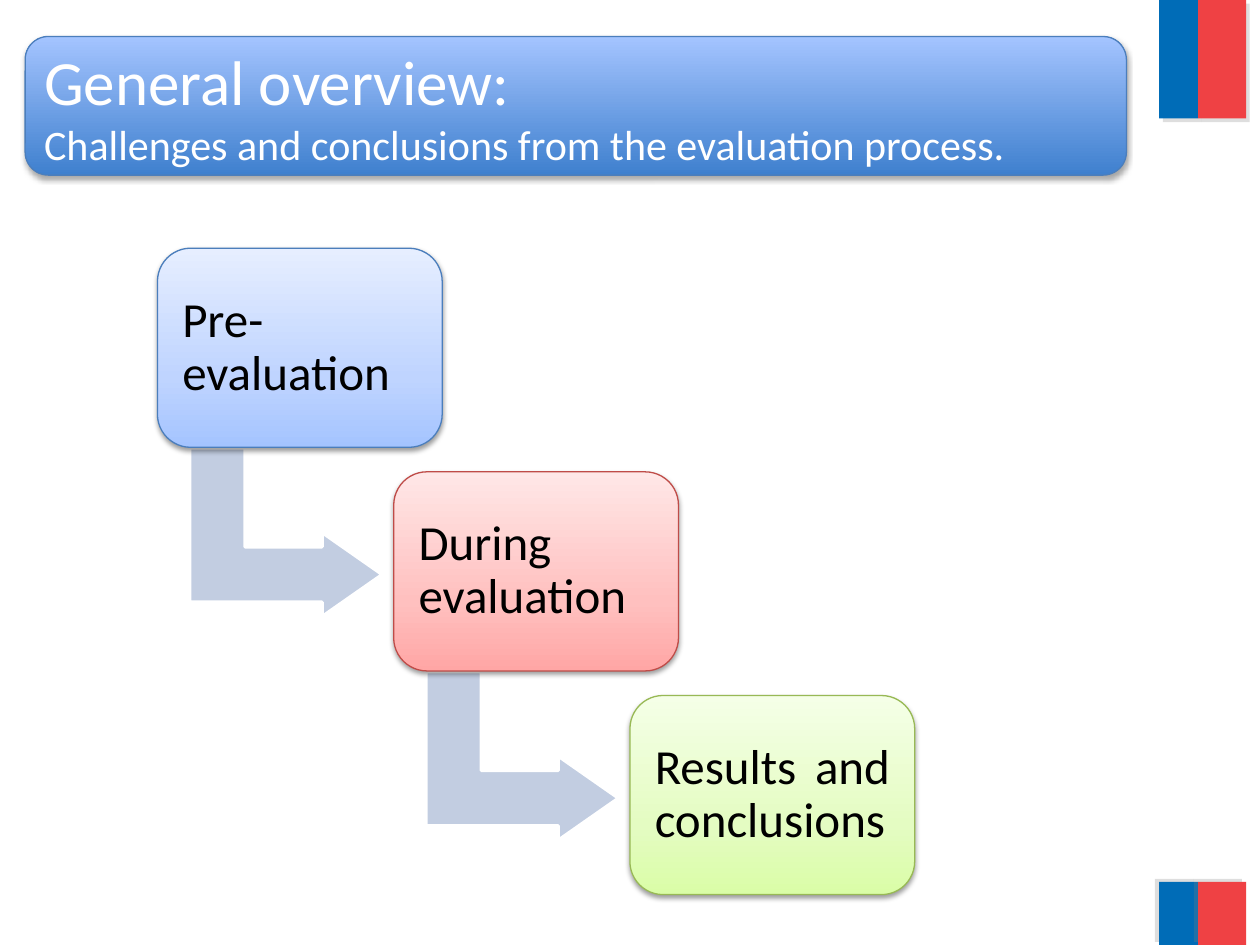
from dataclasses import dataclass

from pptx import Presentation
from pptx.dml.color import RGBColor
from pptx.enum.shapes import MSO_SHAPE
from pptx.enum.text import MSO_ANCHOR, MSO_AUTO_SIZE, PP_ALIGN
from pptx.oxml import parse_xml
from pptx.oxml.ns import nsdecls, qn
from pptx.util import Inches, Pt


@dataclass(frozen=True)
class Theme:
    """Colours and type sizes of the slide."""
    font: str = "Calibri"
    title_size: int = 36
    subtitle_size: int = 24
    step_size: int = 28
    white: str = "FFFFFF"
    black: str = "000000"
    grey: str = "808080"
    arrow: str = "C2CDE1"
    flag_blue: str = "006CB7"
    flag_red: str = "EF4144"
    blue_line: str = "4B7EBC"
    banner: tuple = ((0, "3F80CE"), (100, "A4C4FF"))
    blue: tuple = ((0, "A4C4FF"), (35, "BFD4FF"), (100, "E6EEFF"))
    red_line: str = "BF4C48"
    red: tuple = ((0, "FFA6A5"), (35, "FFC0BF"), (100, "FFE7E7"))
    green_line: str = "98B955"
    green: tuple = ((0, "DAFDA7"), (35, "E4FCC2"), (100, "F5FFE7"))


THEME = Theme()
STEPS = (
    ("Pre-evaluation", THEME.blue, THEME.blue_line),
    ("During evaluation", THEME.red, THEME.red_line),
    ("Results and conclusions", THEME.green, THEME.green_line),
)
STEP_LEFT, STEP_TOP = 1.25, 1.97
STEP_WIDTH, STEP_HEIGHT = 2.26, 1.58
COLUMN_PITCH, ROW_PITCH = 1.875, 1.775
BANNER = (0.2, 0.29, 8.74, 1.1)


def add_shape(slide, kind, box):
    """Add a preset shape, without shadow, at a box in inches."""
    shape = slide.shapes.add_shape(kind, *map(Inches, box))
    shape.shadow.inherit = False
    return shape


def set_fill(shape, colour):
    """Fill a shape with one colour."""
    shape.fill.solid()
    shape.fill.fore_color.rgb = RGBColor.from_string(colour)


def set_line(shape, colour, width):
    """Outline a shape in a colour and a width in points."""
    shape.line.color.rgb = RGBColor.from_string(colour)
    shape.line.width = Pt(width)


def set_gradient(shape, stops):
    """Fill a shape with a gradient that runs from bottom to top."""
    shape.fill.gradient()
    shape.fill.gradient_angle = 90
    stop_list = shape.element.spPr.find(qn("a:gradFill")).find(qn("a:gsLst"))
    for stop in list(stop_list):
        stop_list.remove(stop)
    for percent, colour in stops:
        stop_list.append(parse_xml(
            f'<a:gs {nsdecls("a")} pos="{percent * 1000}">'
            f'<a:srgbClr val="{colour}"/></a:gs>'))


def add_shadow(shape, colour, opacity, blur, distance, angle):
    """Give a shape an outer shadow."""
    effects = shape.element.spPr.find(qn("a:effectLst"))
    effects.append(parse_xml(
        f'<a:outerShdw {nsdecls("a")} blurRad="{Pt(blur)}" dist="{Pt(distance)}" '
        f'dir="{angle * 60000}" rotWithShape="0"><a:srgbClr val="{colour}">'
        f'<a:alpha val="{opacity * 1000}"/></a:srgbClr></a:outerShdw>'))


def format_paragraph(paragraph, size, colour):
    """Justify a paragraph and set its font."""
    paragraph.alignment = PP_ALIGN.JUSTIFY
    paragraph.font.name = THEME.font
    paragraph.font.size = Pt(size)
    paragraph.font.color.rgb = RGBColor.from_string(colour)


def add_flag(slide, top, height, shadow_angle):
    """Add a blue and red flag at the right edge."""
    for left, width, colour in ((9.2, 0.31, THEME.flag_blue),
                                (9.51, 0.38, THEME.flag_red)):
        band = add_shape(slide, MSO_SHAPE.RECTANGLE, (left, top, width, height))
        set_fill(band, colour)
        band.line.fill.background()
        add_shadow(band, THEME.grey, 25, 0, 3, shadow_angle)


def add_panel(slide, box, stops, line_colour, opacity, distance):
    """Add a rounded panel with a gradient and a soft shadow."""
    panel = add_shape(slide, MSO_SHAPE.ROUNDED_RECTANGLE, box)
    set_gradient(panel, stops)
    set_line(panel, line_colour, 0.75)
    add_shadow(panel, THEME.black, opacity, 3.1, distance, 90)
    return panel


def add_title(slide):
    """Place the title placeholder on its banner."""
    add_panel(slide, BANNER, THEME.banner, THEME.blue_line, 35, 1.8)
    title = slide.shapes.title
    left, top, width, height = BANNER
    inset = 0.05
    title.left, title.top = Inches(left + inset), Inches(top)
    title.width, title.height = Inches(width - 2 * inset), Inches(height)
    title.element.getparent().append(title.element)
    frame = title.text_frame
    frame.auto_size = MSO_AUTO_SIZE.NONE
    frame.vertical_anchor = MSO_ANCHOR.MIDDLE
    frame.text = ("General overview:\n"
                  "Challenges and conclusions from the evaluation process.")
    for paragraph, size in zip(frame.paragraphs,
                               (THEME.title_size, THEME.subtitle_size)):
        format_paragraph(paragraph, size, THEME.white)


def add_arrow(slide, left, top):
    """Add the bent arrow that leads from a step to the next one."""
    arrow = add_shape(slide, MSO_SHAPE.BENT_UP_ARROW,
                      (left + 0.35, top + 1.49, 1.34, 1.53))
    for index, value in enumerate((0.328, 0.25, 0.358)):
        arrow.adjustments[index] = value
    arrow.rotation = 90
    set_fill(arrow, THEME.arrow)
    set_line(arrow, THEME.white, 2)


def add_step(slide, left, top, text, stops, line_colour):
    """Add one step of the staircase."""
    step = add_panel(slide, (left, top, STEP_WIDTH, STEP_HEIGHT),
                     stops, line_colour, 38, 1.6)
    frame = step.text_frame
    frame.word_wrap = True
    frame.vertical_anchor = MSO_ANCHOR.MIDDLE
    frame.margin_left = frame.margin_right = Inches(0.12)
    frame.margin_top = frame.margin_bottom = Inches(0.12)
    frame.text = text
    paragraph = frame.paragraphs[0]
    paragraph.line_spacing = 0.9
    format_paragraph(paragraph, THEME.step_size, THEME.black)


def main():
    """Build and save the slide."""
    presentation = Presentation()
    presentation.slide_width, presentation.slide_height = Inches(10), Inches(7.5)
    slide = presentation.slides.add_slide(presentation.slide_layouts[5])
    add_flag(slide, 0, 0.94, 45)
    add_flag(slide, 7, 0.5, 215)
    add_title(slide)
    for index, step in enumerate(STEPS):
        left = STEP_LEFT + index * COLUMN_PITCH
        top = STEP_TOP + index * ROW_PITCH
        if index < len(STEPS) - 1:
            add_arrow(slide, left, top)
        add_step(slide, left, top, *step)
    presentation.save("out.pptx")


if __name__ == "__main__":
    main()
